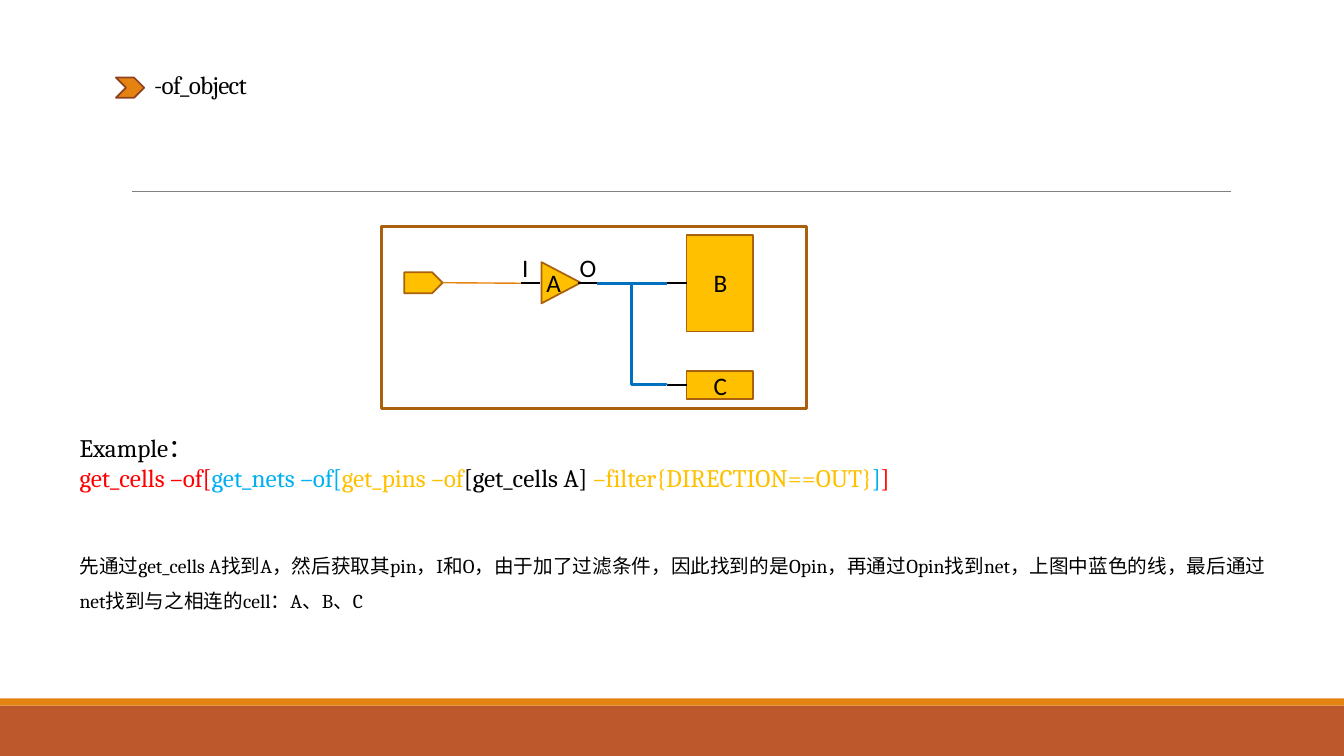
"""Builds the slide on -of_object: a small netlist diagram with a query example."""
import pptx
import pptx.util
import pptx.dml.color
import pptx.enum.shapes
import pptx.enum.text
import pptx.oxml

RGB = pptx.dml.color.RGBColor
KIND = pptx.enum.shapes.MSO_SHAPE
LINK = pptx.enum.shapes.MSO_CONNECTOR
ANCHOR = pptx.enum.text.MSO_ANCHOR
Pt = pptx.util.Pt

BLACK = RGB(0x00, 0x00, 0x00)
GREY = RGB(0x80, 0x80, 0x80)
RUST = RGB(0xBD, 0x58, 0x2C)
ORANGE = RGB(0xE4, 0x83, 0x12)
MAROON = RGB(0x8E, 0x42, 0x21)
BROWN = RGB(0xA9, 0x61, 0x0D)
GOLD = RGB(0xFF, 0xC0, 0x00)
RED = RGB(0xFF, 0x00, 0x00)
SKY = RGB(0x00, 0xB0, 0xF0)
NET_BLUE = RGB(0x00, 0x70, 0xC0)

COLUMNS, ROWS = 13.33, 7.5
deck = pptx.Presentation()
deck.slide_width = pptx.util.Inches(COLUMNS)
deck.slide_height = pptx.util.Inches(ROWS)
slide = deck.slides.add_slide(deck.slide_layouts[6])
shapes = slide.shapes
cell = deck.slide_height / ROWS


def grid(*lengths):
    return [round(length * cell) for length in lengths]


def write(at, paragraphs, size, face, spacing=1.0, anchor=ANCHOR.TOP):
    box = shapes.add_textbox(*grid(*at))
    frame = box.text_frame
    for key, value in {"word_wrap": True, "vertical_anchor": anchor}.items():
        setattr(frame, key, value)
    for index, pieces in enumerate(paragraphs):
        paragraph = frame.add_paragraph() if index else frame.paragraphs[0]
        paragraph.line_spacing = spacing
        for words, color in pieces:
            run = paragraph.add_run()
            run.text = words
            for key, value in {"name": face, "size": Pt(size)}.items():
                setattr(run.font, key, value)
            run.font.color.rgb = color
    return box


blocks = {}
for part, kind, at, fill, edge, weight, turn in [
    ("footer", KIND.RECTANGLE, (0, 7, COLUMNS, 0.5), RUST, None, 0, 0),
    ("footer edge", KIND.RECTANGLE, (0, 6.93, COLUMNS, 0.07), ORANGE, None, 0, 0),
    ("title mark", KIND.CHEVRON, (1.15, 0.77, 0.28, 0.2), ORANGE, MAROON, 1.25, 0),
    ("B", KIND.RECTANGLE, (6.81, 2.33, 0.66, 0.96), GOLD, BROWN, 1.25, 0),
    ("A", KIND.ISOSCELES_TRIANGLE, (5.36, 2.61, 0.41, 0.39), GOLD, BROWN, 1.25, 90),
    ("C", KIND.RECTANGLE, (6.81, 3.68, 0.66, 0.28), GOLD, BROWN, 1.25, 0),
    ("port", KIND.PENTAGON, (4.01, 2.7, 0.38, 0.21), GOLD, BROWN, 1.25, 0),
    ("frame", KIND.RECTANGLE, (3.78, 2.25, 4.22, 1.8), None, BROWN, 2.25, 0),
]:
    block = blocks[part] = shapes.add_shape(kind, *grid(*at))
    block.shadow.inherit = False
    block.rotation = turn
    if fill is None:
        block.fill.background()
    else:
        block.fill.solid()
        block.fill.fore_color.rgb = fill
    if edge is None:
        block.line.fill.background()
    else:
        block.line.color.rgb = edge
        block.line.width = Pt(weight)

WIRE_Y, BRANCH_Y = 2.81, 3.82
for kind, ends, color, weight, source, target in [
    (LINK.STRAIGHT, (1.31, 1.9, 12.21, 1.9), GREY, 0.5, None, None),
    (LINK.STRAIGHT, (5.73, WIRE_Y, 5.92, WIRE_Y), BLACK, 1.5, None, None),
    (LINK.STRAIGHT, (6.62, WIRE_Y, 6.81, WIRE_Y), BLACK, 1.5, None, "B"),
    (LINK.STRAIGHT, (5.17, WIRE_Y, 5.36, WIRE_Y), BLACK, 1.5, None, None),
    (LINK.STRAIGHT, (6.62, BRANCH_Y, 6.81, BRANCH_Y), BLACK, 1.5, None, "C"),
    (LINK.STRAIGHT, (4.39, WIRE_Y, 5.17, WIRE_Y), ORANGE, 1, "port", None),
    (LINK.STRAIGHT, (5.92, WIRE_Y, 6.62, WIRE_Y), NET_BLUE, 2.25, None, None),
    (LINK.ELBOW, (6.94, 3.14, 5.93, 3.49), NET_BLUE, 2.25, None, None),
]:
    wire = shapes.add_connector(kind, *grid(*ends))
    wire.line.color.rgb = color
    wire.line.width = Pt(weight)
    if source:
        wire.begin_connect(blocks[source], 3)
    if target:
        wire.end_connect(blocks[target], 1)
    properties = wire._element.spPr
    properties.append(pptx.oxml.parse_xml(
        '<a:effectLst xmlns:a="http://schemas.openxmlformats.org/drawingml/2006/main"/>'))
    if kind == LINK.ELBOW:
        properties.xfrm.set("rot", str(270 * 60000))
        bend = properties.prstGeom.get_or_add_avLst()
        bend.append(pptx.oxml.parse_xml(
            '<a:gd xmlns:a="http://schemas.openxmlformats.org/drawingml/2006/main"'
            ' name="adj1" fmla="val 99300"/>'))

for letter, left, top, width in [
    ("I", 5.08, 2.45, 0.21),
    ("O", 5.65, 2.45, 0.39),
    ("A", 5.32, 2.6, 0.21),
    ("B", 6.98, 2.6, 0.21),
    ("C", 6.98, 3.62, 0.21),
]:
    write((left, top, width, 0.4), [[(letter, BLACK)]], 18, "Calibri")

title = write((1.43, 0.71, 1.41, 0.33), [[("-of_object", BLACK)]], 18, "Cambria",
              0.85, ANCHOR.BOTTOM)
title.text_frame.paragraphs[0].runs[0].font._element.set("spc", "-50")

query = [
    ("get_cells –of[", RED),
    ("get_nets –of[", SKY),
    ("get_pins –of", GOLD),
    ("[get_cells A] ", BLACK),
    ("–filter{DIRECTION==OUT}", GOLD),
    ("]", SKY),
    ("]", RED),
]
write((0.69, 4.24, 10.92, 0.71), [[("Example：", BLACK)], query], 18, "Cambria")

explanation = (
    "先通过get_cells A找到A，然后获取其pin，I和O，由于加了过滤条件，因此找到的是Opin，"
    "再通过Opin找到net，上图中蓝色的线，最后通过net找到与之相连的cell：A、B、C"
)
write((0.69, 5.33, 12.15, 0.81), [[(explanation, BLACK)]], 14, "Cambria", 1.5)

deck.save("out.pptx")
